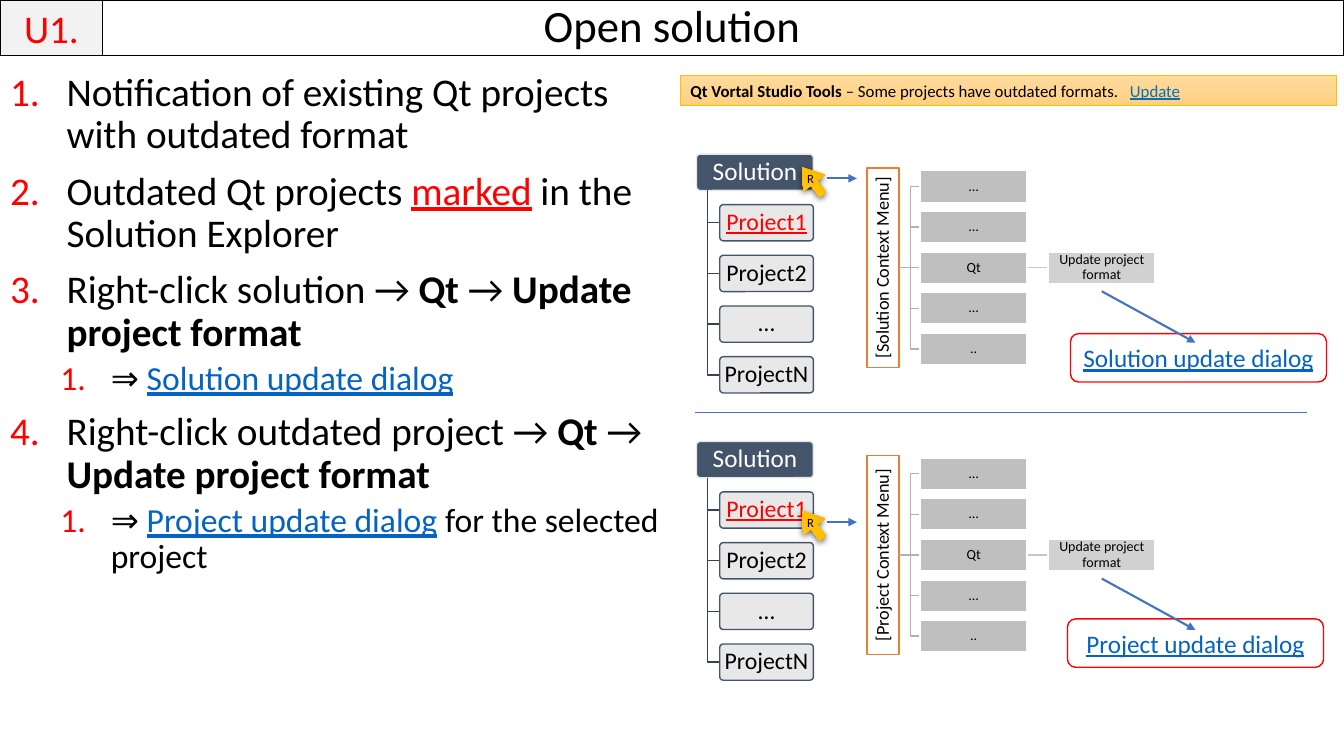
from dataclasses import dataclass
from typing import NamedTuple

import lxml.etree
import pptx
import pptx.dml.color
import pptx.enum.shapes
import pptx.enum.text
import pptx.oxml.ns
import pptx.util

Pt = pptx.util.Pt
qn = pptx.oxml.ns.qn
Shape = pptx.enum.shapes.MSO_SHAPE
Align = pptx.enum.text.PP_ALIGN
Anchor = pptx.enum.text.MSO_ANCHOR
CELLS_PER_INCH = 10


@dataclass(frozen=True)
class Theme:
    font: str = "Calibri"
    black: str = "000000"
    white: str = "FFFFFF"
    red: str = "FF0000"
    link: str = "0563C1"
    banner_link: str = "0070C0"
    unit: str = "F2F2F2"
    solution: str = "44546A"
    project: str = "E7E6E6"
    branch: str = "364355"
    menu: str = "ED7D31"
    entry: str = "A5A5A5"
    menu_branch: str = "B1B1B1"
    submenu_branch: str = "C6C6C6"
    arrow: str = "4472C4"
    banner_line: str = "FFC000"
    banner: tuple = ("FFDB9E", "FFD590", "FFD07C")
    cursor: tuple = ("FFC64B", "FFC000", "E3AB00")
    title_size: int = 32
    list_size: int = 28
    sublist_size: int = 24
    solution_size: int = 18
    project_size: int = 17
    menu_size: int = 13
    banner_size: int = 12
    entry_size: int = 10
    cursor_size: int = 9


THEME = Theme()


class Box(NamedTuple):
    column: float
    row: float
    columns: float
    rows: float


class Run(NamedTuple):
    text: str
    bold: bool = False
    color: str = THEME.black
    underline: bool = False


@dataclass(frozen=True)
class Step:
    runs: tuple[Run, ...]
    level: int = 0


@dataclass(frozen=True)
class Panel:
    row: float
    menu: str
    cursor_row: float
    dialog: str
    dialog_box: Box


QT = Run("Qt", bold=True)
UPDATE = Run("Update project format", bold=True)
STEPS = (
    Step((Run("Notification of existing Qt projects with outdated format"),)),
    Step((Run("Outdated Qt projects "), Run("marked", color=THEME.red, underline=True),
          Run(" in the Solution Explorer"))),
    Step((Run("Right-click solution → "), QT, Run(" → "), UPDATE)),
    Step((Run("⇒ "), Run("Solution update dialog", color=THEME.link, underline=True)), 1),
    Step((Run("Right-click outdated project → "), QT, Run(" → "), UPDATE)),
    Step((Run("⇒ "), Run("Project update dialog", color=THEME.link, underline=True),
          Run(" for the selected project")), 1),
)
PROJECTS = ("Project1", "Project2", "…", "ProjectN")
ENTRIES = ("…", "…", "Qt", "…", "..")
PANELS = (
    Panel(15.3, "[Solution Context Menu]", 16.6, "Solution update dialog", Box(106.2, 33.1, 25.4, 4.8)),
    Panel(43.8, "[Project Context Menu]", 50.7, "Project update dialog", Box(105.9, 61.4, 25.4, 4.8)),
)


def grid(cells: float) -> int:
    return pptx.util.Inches(cells / CELLS_PER_INCH)


def rgb(color: str) -> pptx.dml.color.RGBColor:
    return pptx.dml.color.RGBColor.from_string(color)


def write(frame, steps, *, size=18, sublist_size=None, align=Align.CENTER, anchor=Anchor.MIDDLE,
          inset=None, spacing=None, wrap=True, numbered=False) -> None:
    frame.word_wrap = wrap
    frame.auto_size = pptx.enum.text.MSO_AUTO_SIZE.NONE
    frame.vertical_anchor = anchor
    if inset is not None:
        frame.margin_left = frame.margin_right = frame.margin_top = frame.margin_bottom = grid(inset)
    for index, step in enumerate(steps):
        paragraph = frame.add_paragraph() if index else frame.paragraphs[0]
        paragraph.level = step.level
        paragraph.alignment = align
        if spacing:
            paragraph.line_spacing = spacing
        if numbered:
            number(paragraph, step.level)
        for part in step.runs:
            run = paragraph.add_run()
            run.text = part.text
            run.font.name = THEME.font
            run.font.size = Pt(sublist_size if step.level else size)
            run.font.bold = part.bold
            run.font.underline = part.underline
            run.font.color.rgb = rgb(part.color)


def number(paragraph, level: int) -> None:
    paragraph.space_before = Pt(5 if level else 10)
    properties = paragraph._p.get_or_add_pPr()
    properties.set("marL", str(grid(10 if level else 5.6)))
    properties.set("indent", str(-grid(5 if level else 5.6)))
    tint = lxml.etree.SubElement(properties, qn("a:buClr"))
    lxml.etree.SubElement(tint, qn("a:srgbClr"), val=THEME.red)
    lxml.etree.SubElement(properties, qn("a:buFont"), typeface="+mj-lt")
    lxml.etree.SubElement(properties, qn("a:buAutoNum"), type="arabicPeriod")


def place(shape, box: Box) -> None:
    shape.left, shape.top, shape.width, shape.height = map(grid, box)


def draw(slide, kind, box: Box, *, fill, line=None, weight=1.0, alpha=100, adjust=(), turn=0.0):
    shape = slide.shapes.add_shape(kind, *map(grid, box))
    shape.shadow.inherit = False
    shape.rotation = turn
    for index, value in enumerate(adjust):
        shape.adjustments[index] = value
    if isinstance(fill, tuple):
        shape.fill.gradient()
        shape.fill.gradient_angle = 270
        stops = shape.element.spPr.find(".//" + qn("a:gsLst"))
        stops.clear()
        for index, color in enumerate(fill):
            stop = lxml.etree.SubElement(stops, qn("a:gs"), pos=str(index * 50000))
            lxml.etree.SubElement(stop, qn("a:srgbClr"), val=color)
    else:
        shape.fill.solid()
        shape.fill.fore_color.rgb = rgb(fill)
        if alpha < 100:
            tint = shape.element.spPr.find(qn("a:solidFill") + "/" + qn("a:srgbClr"))
            lxml.etree.SubElement(tint, qn("a:alpha"), val=str(alpha * 1000))
    if line:
        shape.line.color.rgb = rgb(line)
        shape.line.width = Pt(weight)
    else:
        shape.line.fill.background()
    return shape


def connect(slide, start, end, *, color, weight=1.0, arrow=False) -> None:
    straight = pptx.enum.shapes.MSO_CONNECTOR.STRAIGHT
    line = slide.shapes.add_connector(straight, *map(grid, (*start, *end)))
    line.line.color.rgb = rgb(color)
    line.line.width = Pt(weight)
    properties = line.element.spPr
    if arrow:
        lxml.etree.SubElement(properties.find(qn("a:ln")), qn("a:tailEnd"), type="triangle")
    lxml.etree.SubElement(properties, qn("a:effectLst"))


def branch(slide, points, color: str) -> None:
    start, *rest = [(grid(column), grid(row)) for column, row in points]
    builder = slide.shapes.build_freeform(*start)
    builder.add_line_segments(rest, close=False)
    elbow = builder.convert_to_shape()
    elbow.shadow.inherit = False
    elbow.fill.background()
    elbow.line.color.rgb = rgb(color)
    elbow.line.width = Pt(1)


def draw_tree(slide, row: float) -> None:
    solution = draw(slide, Shape.ROUNDED_RECTANGLE, Box(69.1, row, 11.6, 3.6),
                    fill=THEME.solution, line=THEME.project, adjust=(0.1,))
    write(solution.text_frame, [Step((Run("Solution", color=THEME.white),))],
          size=THEME.solution_size, inset=0.3, spacing=0.9, wrap=False)
    for index, name in enumerate(PROJECTS):
        top = row + 5 + 5.03 * index
        branch(slide, ((70.2, row + 3.6), (70.2, top + 1.8), (71.4, top + 1.8)), THEME.branch)
        project = draw(slide, Shape.ROUNDED_RECTANGLE, Box(71.4, top, 9.3, 3.6),
                       fill=THEME.project, line=THEME.solution, alpha=90, adjust=(0.1,))
        label = Run(name) if index else Run(name, color=THEME.red, underline=True)
        write(project.text_frame, [Step((label,))], size=THEME.project_size,
              inset=0.3, spacing=0.9, wrap=False)


def draw_menu(slide, row: float, title: str) -> None:
    pitch, height = 4.03, 3.2
    middle = row + 1.6 + 2 * pitch + height / 2
    menu = draw(slide, Shape.RECTANGLE, Box(77.7, middle - height / 2, 19.8, height),
                fill=THEME.white, line=THEME.menu, turn=270)
    write(menu.text_frame, [Step((Run(title),))], size=THEME.menu_size, inset=0.1, spacing=0.9)
    connect(slide, (101.9, middle), (104, middle), color=THEME.submenu_branch)
    entries = [(name, 91.3, middle + (index - 2) * pitch, 70) for index, name in enumerate(ENTRIES)]
    for _, column, center, _ in entries:
        if center == middle:
            connect(slide, (89.2, middle), (column, middle), color=THEME.menu_branch)
        else:
            branch(slide, ((89.2, middle), (90.3, middle), (90.3, center), (column, center)),
                   THEME.menu_branch)
    for name, column, center, alpha in [*entries, (UPDATE.text, 104, middle, 50)]:
        entry = draw(slide, Shape.RECTANGLE, Box(column, center - height / 2, 10.6, height),
                     fill=THEME.entry, line=THEME.white, weight=1.5, alpha=alpha)
        write(entry.text_frame, [Step((Run(name),))], size=THEME.entry_size, inset=0.1, spacing=0.9)


def draw_cursor(slide, row: float) -> None:
    connect(slide, (82, row + 1.1), (85, row + 1.1), color=THEME.arrow, weight=1.5, arrow=True)
    cursor = draw(slide, Shape.RIGHT_ARROW, Box(78.9, row, 3.4, 2.7),
                  fill=THEME.cursor, adjust=(0.3, 0.73), turn=232.8)
    shadow = lxml.etree.SubElement(cursor.element.spPr.find(qn("a:effectLst")), qn("a:outerShdw"),
                                   blurRad=str(Pt(4.5)), dist=str(Pt(1.5)), dir="5400000")
    tint = lxml.etree.SubElement(shadow, qn("a:srgbClr"), val=THEME.black)
    lxml.etree.SubElement(tint, qn("a:alpha"), val="63000")
    button = slide.shapes.add_textbox(*map(grid, Box(78.7, row - 0.1, 3.4, 2.5)))
    write(button.text_frame, [Step((Run("R"),))], size=THEME.cursor_size)


def draw_panel(slide, panel: Panel) -> None:
    draw_tree(slide, panel.row)
    draw_menu(slide, panel.row, panel.menu)
    draw_cursor(slide, panel.cursor_row)
    dialog = draw(slide, Shape.ROUNDED_RECTANGLE, panel.dialog_box, fill=THEME.white, line=THEME.red)
    write(dialog.text_frame, [Step((Run(panel.dialog, color=THEME.link, underline=True),))],
          size=THEME.solution_size)
    connect(slide, (109.3, panel.row + 13.6), (118.6, panel.row + 18.7),
            color=THEME.arrow, weight=1.5, arrow=True)


def main() -> None:
    deck = pptx.Presentation()
    deck.slide_width, deck.slide_height = grid(133.33), grid(75)
    slide = deck.slides.add_slide(deck.slide_layouts[1])
    title, steps = slide.placeholders
    place(title, Box(0, 0, 133.33, 5.5))
    title.line.color.rgb = rgb(THEME.black)
    title.line.width = Pt(0.75)
    write(title.text_frame, [Step((Run("Open solution"),))], size=THEME.title_size, spacing=0.9)
    place(steps, Box(0, 6.7, 66.7, 68.3))
    write(steps.text_frame, STEPS, size=THEME.list_size, sublist_size=THEME.sublist_size,
          align=Align.LEFT, anchor=Anchor.TOP, spacing=0.9, numbered=True)
    unit = draw(slide, Shape.RECTANGLE, Box(0, 0, 10.2, 5.5),
                fill=THEME.unit, line=THEME.black, weight=0.75)
    write(unit.text_frame, [Step((Run("U1.", color=THEME.red),))], size=THEME.list_size)
    banner = draw(slide, Shape.RECTANGLE, Box(67.5, 7.5, 65.1, 3),
                  fill=THEME.banner, line=THEME.banner_line, weight=0.5)
    notice = Step((Run("Qt Vortal Studio Tools ", bold=True),
                   Run("– Some projects have outdated formats.   "),
                   Run("Update", color=THEME.banner_link, underline=True)))
    write(banner.text_frame, [notice], size=THEME.banner_size, align=Align.LEFT, anchor=Anchor.TOP)
    for panel in PANELS:
        draw_panel(slide, panel)
    connect(slide, (68.9, 40.9), (129.7, 40.9), color=THEME.arrow, weight=0.5)
    deck.save("out.pptx")


if __name__ == "__main__":
    main()
